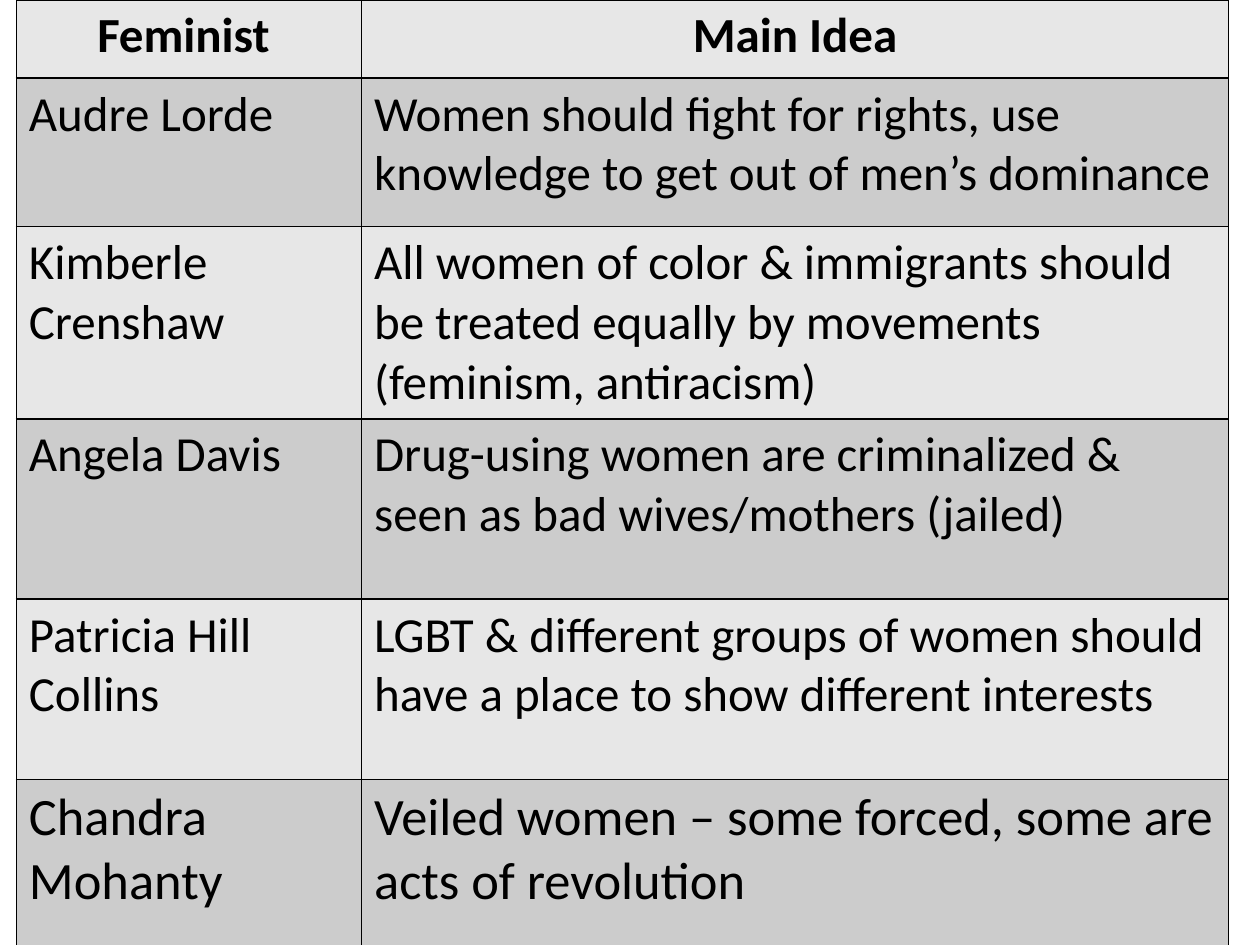
from dataclasses import dataclass

from lxml import etree
from pptx import Presentation
from pptx.dml.color import RGBColor
from pptx.enum.text import PP_ALIGN
from pptx.oxml.ns import qn
from pptx.util import Inches, Pt

CENTER, LEFT = PP_ALIGN.CENTER, PP_ALIGN.LEFT
BLANK = 6


@dataclass(frozen=True)
class Theme:
    font: str = "Calibri"
    ink: str = "000000"
    bands: tuple = ("E7E7E7", "CCCCCC")
    size: int = 28
    last: int = 30
    line: int = 1


THEME = Theme()

# Column widths and row heights in inches
COLS = (2.74, 6.88)
ROWS = (0.62, 1.18) + (1.43,) * 4
SIDE = 0.13

IDEAS = (
    ("Feminist ", "Main Idea"),
    ("Audre Lorde",
     "Women should fight for rights, use knowledge to get out of men’s dominance"),
    ("Kimberle Crenshaw",
     "All women of color & immigrants should be treated equally by movements "
     "(feminism, antiracism)"),
    ("Angela Davis",
     "Drug-using women are criminalized & seen as bad wives/mothers (jailed)"),
    ("Patricia Hill Collins",
     "LGBT & different groups of women should have a place to show different interests"),
    ("Chandra Mohanty",
     "Veiled women – some forced, some are acts of revolution"),
)


def add_rules(cell):
    """Draw a thin line on all four sides; the fill must follow the lines."""
    props = cell._tc.get_or_add_tcPr()
    for spot, side in enumerate(("lnL", "lnR", "lnT", "lnB")):
        rule = etree.Element(qn(f"a:{side}"), w=str(Pt(THEME.line)))
        fill = etree.SubElement(rule, qn("a:solidFill"))
        etree.SubElement(fill, qn("a:srgbClr"), val=THEME.ink)
        props.insert(spot, rule)


def fill_cell(cell, text, band, size, head):
    cell.text = text
    cell.fill.solid()
    cell.fill.fore_color.rgb = RGBColor.from_string(band)
    add_rules(cell)
    para = cell.text_frame.paragraphs[0]
    para.alignment = CENTER if head else LEFT
    font = para.font
    font.name, font.size, font.bold = THEME.font, Pt(size), head
    font.color.rgb = RGBColor.from_string(THEME.ink)


def add_ideas(slide):
    frame = slide.shapes.add_table(
        len(ROWS), len(COLS), Inches(SIDE), 0,
        Inches(sum(COLS)), Inches(sum(ROWS)))
    table = frame.table
    for col, width in zip(table.columns, COLS):
        col.width = Inches(width)
    for row, height in zip(table.rows, ROWS):
        row.height = Inches(height)

    # Alternate the bands, with a bold header and a larger last row
    for r, texts in enumerate(IDEAS):
        size = THEME.last if r == len(IDEAS) - 1 else THEME.size
        for c, text in enumerate(texts):
            fill_cell(table.cell(r, c), text, THEME.bands[r % 2], size, r == 0)


def main():
    deck = Presentation()
    deck.slide_width, deck.slide_height = Inches(10), Inches(7.5)
    add_ideas(deck.slides.add_slide(deck.slide_layouts[BLANK]))
    deck.save("out.pptx")


if __name__ == "__main__":
    main()
